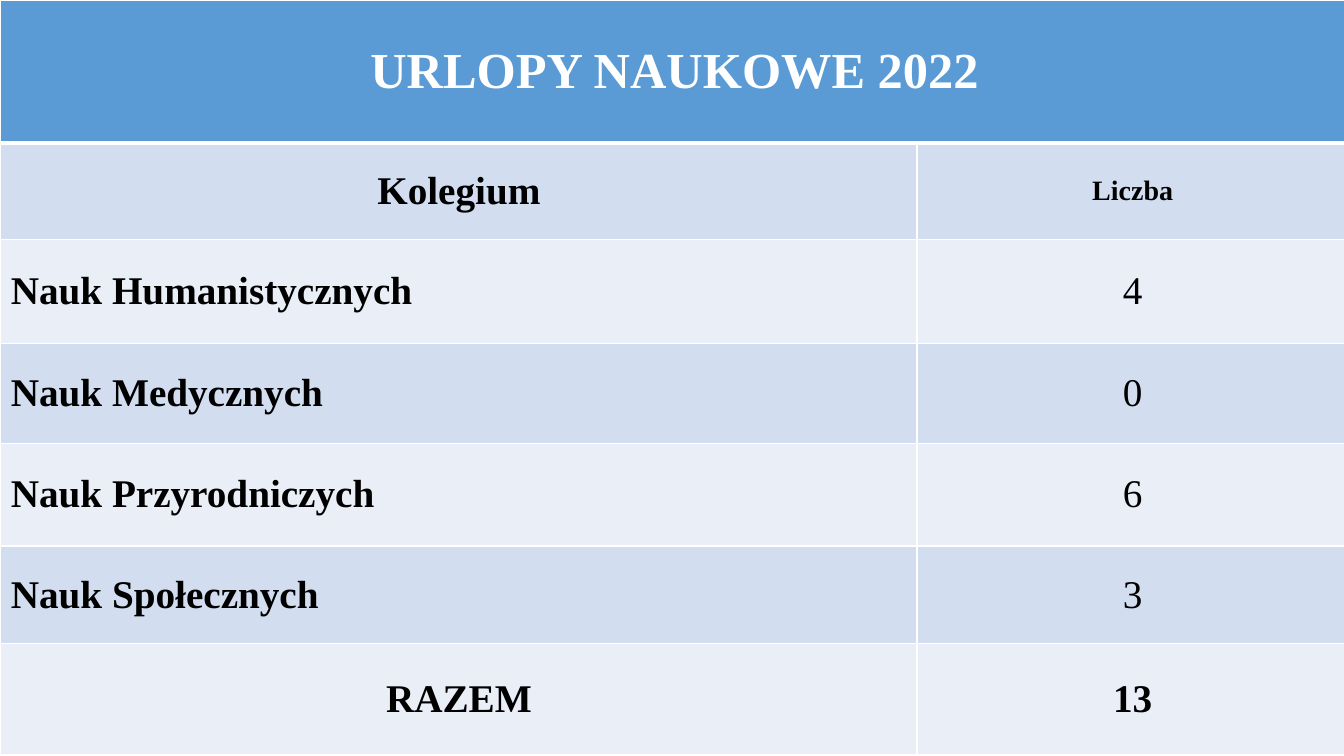
import pptx
import pptx.util
import pptx.dml.color
import pptx.enum.text
import lxml.etree

Cm = pptx.util.Cm
Pt = pptx.util.Pt
ALIGN = pptx.enum.text.PP_ALIGN
NS = "http://schemas.openxmlformats.org/drawingml/2006/main"


def color(code):
    return pptx.dml.color.RGBColor.from_string(code)


def border(cell, side, width):
    """Draw one white cell edge; call before the cell is filled."""
    line = lxml.etree.SubElement(
        cell._tc.get_or_add_tcPr(), f"{{{NS}}}ln{side}", w=str(Pt(width)))
    fill = lxml.etree.SubElement(line, f"{{{NS}}}solidFill")
    lxml.etree.SubElement(fill, f"{{{NS}}}srgbClr", val="FFFFFF")


widths = [23.09, 10.87]
heights = [3.58, 2.44, 2.62, 2.51, 2.59, 2.46, 2.79]
rows = [
    ["URLOPY NAUKOWE 2022", ""],
    ["Kolegium", "Liczba"],
    ["Nauk Humanistycznych", "4"],
    ["Nauk Medycznych", "0"],
    ["Nauk Przyrodniczych", "6"],
    ["Nauk Społecznych", "3"],
    ["RAZEM", "13"],
]
last = len(rows) - 1

deck = pptx.Presentation()
deck.slide_width = Cm(33.87)
deck.slide_height = Cm(19.05)
slide = deck.slides.add_slide(deck.slide_layouts[6])

frame = slide.shapes.add_table(
    len(rows), len(widths), Cm(0.02), Cm(0.02),
    Cm(sum(widths)), Cm(sum(heights)))
table = frame.table
for col, width in zip(table.columns, widths):
    col.width = Cm(width)
for row, height in zip(table.rows, heights):
    row.height = Cm(height)
table.cell(0, 0).merge(table.cell(0, 1))

for r, texts in enumerate(rows):
    for c, text in enumerate(texts):
        cell = table.cell(r, c)
        border(cell, "L", 1)
        border(cell, "R", 1)
        border(cell, "T", 3 if r == 1 else 1)
        border(cell, "B", 3 if r == 0 else 1)
        cell.fill.solid()
        band = "D2DEEF" if r % 2 else "EAEFF7"
        cell.fill.fore_color.rgb = color(band if r else "5B9BD5")
        cell.vertical_anchor = pptx.enum.text.MSO_ANCHOR.MIDDLE
        if not text:
            continue
        data = 1 < r < last
        para = cell.text_frame.paragraphs[0]
        para.alignment = ALIGN.LEFT if data and c == 0 else ALIGN.CENTER
        run = para.add_run()
        run.text = text
        font = run.font
        font.name = "Times New Roman"
        font.size = Pt(36 if r == 0 else 20 if text == "Liczba" else 28)
        font.bold = not (data and c == 1)
        font.color.rgb = color("000000" if r else "FFFFFF")

deck.save("out.pptx")
